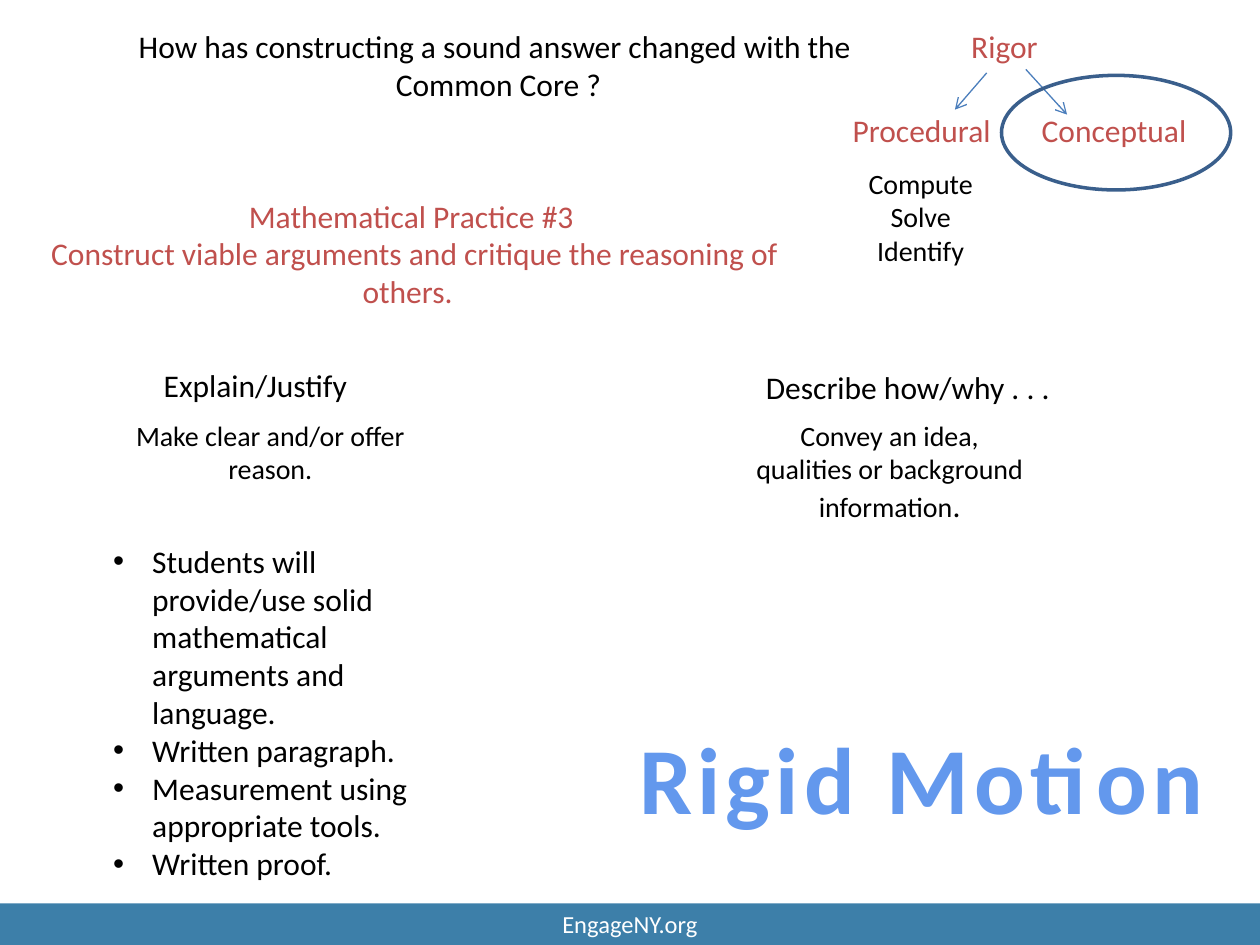
import dataclasses

import pptx
import pptx.dml.color
import pptx.enum.shapes
import pptx.enum.text
import pptx.oxml
import pptx.oxml.ns
import pptx.util

Cm, Pt = pptx.util.Cm, pptx.util.Pt
Kind = pptx.enum.shapes.MSO_SHAPE
Align = pptx.enum.text.PP_ALIGN
Fit = pptx.enum.text.MSO_AUTO_SIZE
NS = pptx.oxml.ns.nsdecls("a")


@dataclasses.dataclass(frozen=True)
class Theme:
    face: str = "Calibri"
    ink: str = "000000"
    accent: str = "C0504D"
    white: str = "FFFFFF"
    bar: str = "3D7FA9"
    ring: str = "3A5F8C"
    arrow: str = "4B7EBC"
    art: str = "6398ED"
    glow: str = "A9CCF5"
    foot: int = 14
    small: int = 16
    body: int = 18
    huge: int = 54


def color(code):
    return pptx.dml.color.RGBColor.from_string(code)


def apply(item, values):
    for name, value in values.items():
        setattr(item, name, value)


class Deck:
    def __init__(self, theme):
        self.theme = theme
        self.file = pptx.Presentation()
        apply(self.file, {"slide_width": Cm(25.4), "slide_height": Cm(19.05)})
        self.slide = self.file.slides.add_slide(self.file.slide_layouts[6])

    def style(self, run, size, code, bold=False):
        apply(run.font, {"name": self.theme.face, "size": Pt(size), "bold": bold})
        run.font.color.rgb = color(code)

    def fill(self, frame, lines, size, code, align, bullet=False, bold=False):
        """Put lines in a frame; a line is a string or a list of (text, size) runs."""
        for i, line in enumerate(lines):
            para = frame.add_paragraph() if i else frame.paragraphs[0]
            para.alignment = align
            if bullet:
                props = para._p.get_or_add_pPr()
                for name, value in {"marL": Cm(0.79), "indent": -Cm(0.79)}.items():
                    props.set(name, str(value))
                props.append(pptx.oxml.parse_xml(f'<a:buFont {NS} typeface="Arial"/>'))
                props.append(pptx.oxml.parse_xml(f'<a:buChar {NS} char="•"/>'))
            for text, points in [(line, size)] if isinstance(line, str) else line:
                run = para.add_run()
                run.text = text
                self.style(run, points, code, bold)

    def text(self, box, *lines, size=None, code=None, align=Align.CENTER,
             wrap=True, bullet=False, bold=False):
        frame = self.slide.shapes.add_textbox(*map(Cm, box)).text_frame
        apply(frame, {"word_wrap": wrap, "auto_size": Fit.SHAPE_TO_FIT_TEXT})
        self.fill(frame, lines, size or self.theme.body, code or self.theme.ink,
                  align, bullet, bold)
        return frame

    def banner(self, box, line):
        """Large spaced lettering with a soft shadow."""
        frame = self.text(box, line, size=self.theme.huge, code=self.theme.art,
                          wrap=False, bold=True)
        props = frame.paragraphs[0].runs[0]._r.get_or_add_rPr()
        props.set("spc", "300")
        shade = pptx.oxml.parse_xml(
            f'<a:effectLst {NS}><a:outerShdw blurRad="38100" dist="25400" dir="2700000">'
            f'<a:srgbClr val="{self.theme.glow}"/></a:outerShdw></a:effectLst>')
        props.find(pptx.oxml.ns.qn("a:solidFill")).addnext(shade)

    def arrow(self, start, end):
        line = self.slide.shapes.add_connector(
            pptx.enum.shapes.MSO_CONNECTOR.STRAIGHT, *map(Cm, start + end))
        line.line.color.rgb = color(self.theme.arrow)
        line.line.width = Pt(0.75)
        props = line._element.spPr
        props.find(pptx.oxml.ns.qn("a:ln")).append(
            pptx.oxml.parse_xml(f'<a:tailEnd {NS} type="arrow"/>'))
        props.append(pptx.oxml.parse_xml(f"<a:effectLst {NS}/>"))

    def shape(self, kind, box):
        item = self.slide.shapes.add_shape(kind, *map(Cm, box))
        item.shadow.inherit = False
        return item

    def ring(self, box):
        item = self.shape(Kind.OVAL, box)
        item.fill.background()
        item.line.color.rgb = color(self.theme.ring)
        item.line.width = Pt(2)

    def footer(self, box, line):
        item = self.shape(Kind.RECTANGLE, box)
        item.fill.solid()
        item.fill.fore_color.rgb = color(self.theme.bar)
        item.line.fill.background()
        item.text_frame.vertical_anchor = pptx.enum.text.MSO_ANCHOR.MIDDLE
        self.fill(item.text_frame, [line], self.theme.foot, self.theme.white,
                  Align.CENTER)


def main():
    theme = Theme()
    deck = Deck(theme)
    deck.text((0.84, 0.43, 18.42, 2.57),
              "How has constructing a sound answer changed with the ",
              "Common Core ?")
    deck.text((-0.18, 3.84, 16.94, 2.57), "Mathematical Practice #3",
              " Construct viable arguments and critique the reasoning of others. ",
              code=theme.accent)

    for box, line in (((3.05, 7.26, 5.26, 1.02), "Explain/Justify"),
                      ((15.19, 7.29, 7.29, 1.02), "Describe how/why . . .")):
        deck.text(box, line, align=Align.LEFT)
    deck.text((2.06, 8.31, 6.78, 1.63), "Make clear and/or offer reason.",
              size=theme.small)
    deck.text((14.91, 8.31, 6.05, 2.39),
              [("Convey an idea, qualities or background information", theme.small),
               (".", theme.body)])
    deck.text((2.03, 10.8, 7.19, 7.19),
              "Students will provide/use solid mathematical arguments and language.",
              "Written paragraph.",
              "Measurement using appropriate tools.",
              "Written proof.", align=Align.LEFT, bullet=True)

    for box, line in (((19.33, 0.43, 3.81, 1.07), "Rigor"),
                      ((16.94, 2.11, 3.81, 1.02), "Procedural"),
                      ((20.75, 2.11, 4.45, 1.02), "Conceptual")):
        deck.text(box, line, code=theme.accent, align=Align.LEFT)
    deck.arrow((19.89, 1.47), (19.25, 2.21))
    deck.arrow((20.68, 1.4), (21.51, 2.31))
    deck.banner((12.52, 14.4, 12.12, 2.57), "Rigid Motion")
    deck.text((16.87, 3.23, 3.38, 2.31), "Compute", "Solve", "Identify",
              size=theme.small)
    deck.ring((20.19, 1.52, 4.62, 2.31))
    deck.footer((0, 18.21, 25.4, 0.84), "EngageNY.org")
    deck.file.save("out.pptx")


if __name__ == "__main__":
    main()
